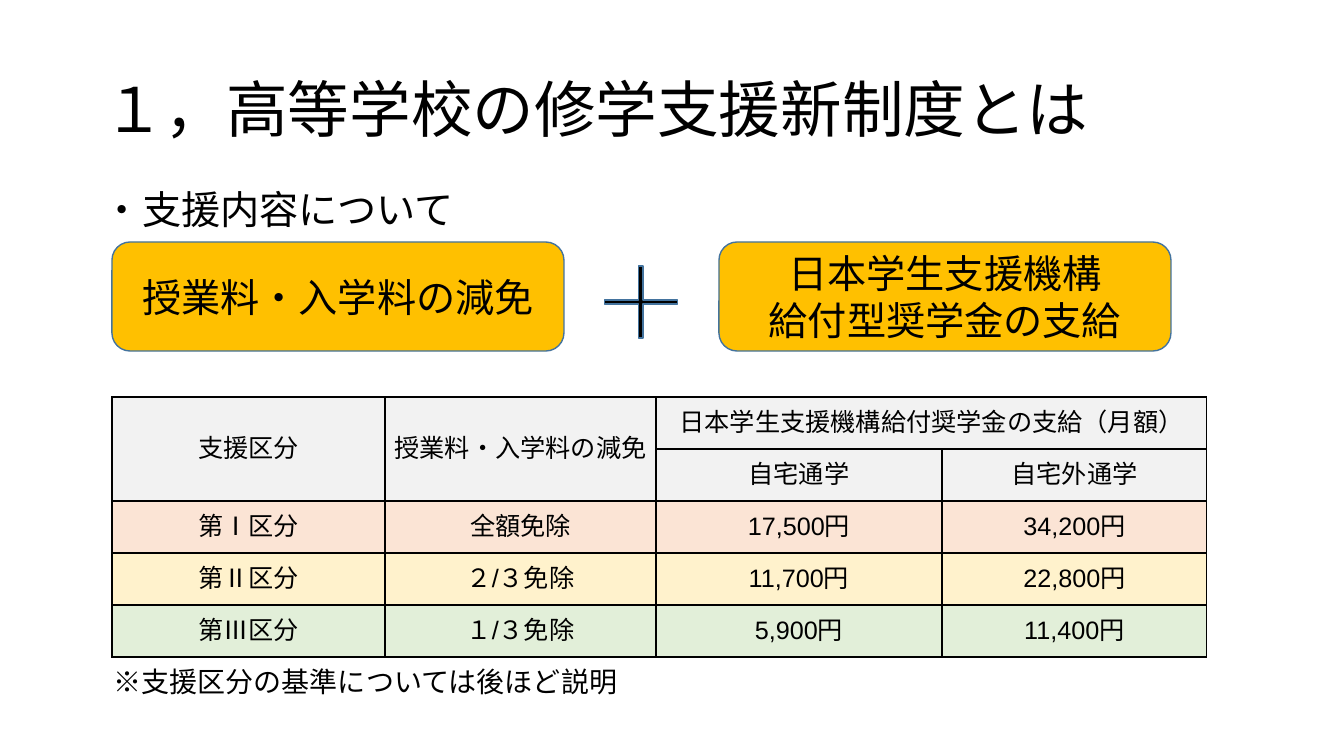
from lxml import etree
from pptx import Presentation
from pptx import util as u
from pptx.dml.color import RGBColor
from pptx.enum import shapes, text
from pptx.oxml.ns import qn

EMU_PER_PX = 914400 / 100.8
GOTHIC, ARIAL = "Noto Sans CJK JP", "Arial"
BLACK, AMBER, OUTLINE, HEADER = "000000", "FFC000", "43739E", "F2F2F2"
CENTER, MIDDLE = text.PP_ALIGN.CENTER, text.MSO_ANCHOR.MIDDLE

COLUMN_WIDTHS = [273, 271, 286, 265]
ROW_HEIGHT = 52
ROWS = [
    (HEADER, ["支援区分", "授業料・入学料の減免", "日本学生支援機構給付奨学金の支給（月額）", ""]),
    (HEADER, ["", "", "自宅通学", "自宅外通学"]),
    ("FBE4D5", ["第Ⅰ区分", "全額免除", "17,500円", "34,200円"]),
    ("FFF2CC", ["第Ⅱ区分", "２/３免除", "11,700円", "22,800円"]),
    ("E2EFD9", ["第Ⅲ区分", "１/３免除", "5,900円", "11,400円"]),
]
MERGES = [((0, 0), (1, 0)), ((0, 1), (1, 1)), ((0, 2), (0, 3))]


def px(length):
    return u.Emu(round(length * EMU_PER_PX))


def color(value):
    return RGBColor.from_string(value)


def write(frame, lines, size, font=GOTHIC, align=None, line_spacing=None):
    """Fill a text frame with one paragraph per line."""
    for index, line in enumerate(lines):
        para = frame.paragraphs[0] if index == 0 else frame.add_paragraph()
        para.alignment = align
        para.line_spacing = line_spacing
        span = para.add_run()
        span.text = line
        span.font.size = u.Pt(size)
        span.font.color.rgb = color(BLACK)
        span.font.name = font
        etree.SubElement(span.font._element, qn("a:ea"), typeface=font)


def add_title(page, line, *area):
    title = page.shapes.title
    title.left, title.top, title.width, title.height = map(px, area)
    title.text_frame.vertical_anchor = MIDDLE
    write(title.text_frame, [line], 44, align=text.PP_ALIGN.LEFT, line_spacing=0.9)


def add_text(page, line, size, *area, wrap=True, **style):
    box = page.shapes.add_textbox(*map(px, area))
    box.text_frame.word_wrap = wrap
    write(box.text_frame, [line], size, **style)


def add_figure(page, kind, fill, *area):
    figure = page.shapes.add_shape(kind, *map(px, area))
    figure.shadow.inherit = False
    figure.fill.solid()
    figure.fill.fore_color.rgb = color(fill)
    figure.line.color.rgb = color(OUTLINE)
    figure.line.width = u.Pt(1)
    return figure


def add_support_box(page, lines, left):
    box = add_figure(page, shapes.MSO_SHAPE.ROUNDED_RECTANGLE, AMBER, left, 242, 452, 109)
    box.text_frame.vertical_anchor = MIDDLE
    write(box.text_frame, lines, 28, align=CENTER)


def set_borders(cell):
    properties = cell._tc.get_or_add_tcPr()
    for position, side in enumerate(("lnL", "lnR", "lnT", "lnB")):
        line = etree.Element(qn("a:" + side), w=str(u.Pt(1)))
        fill = etree.SubElement(line, qn("a:solidFill"))
        etree.SubElement(fill, qn("a:srgbClr"), val=BLACK)
        properties.insert(position, line)


def add_support_table(page, left, top):
    area = left, top, sum(COLUMN_WIDTHS), ROW_HEIGHT * len(ROWS)
    table = page.shapes.add_table(len(ROWS), len(COLUMN_WIDTHS), *map(px, area)).table
    for column, width in zip(table.columns, COLUMN_WIDTHS):
        column.width = px(width)
    for row, (fill, labels) in zip(table.rows, ROWS):
        row.height = px(ROW_HEIGHT)
        for cell, label in zip(row.cells, labels):
            cell.fill.solid()
            cell.fill.fore_color.rgb = color(fill)
            cell.vertical_anchor = MIDDLE
            cell.margin_left = cell.margin_right = px(7)
            cell.margin_top = cell.margin_bottom = 0
            set_borders(cell)
            if label:
                write(cell.text_frame, [label], 18, ARIAL, CENTER)
    for first, last in MERGES:
        table.cell(*first).merge(table.cell(*last))


def main():
    deck = Presentation()
    deck.slide_width, deck.slide_height = px(1344), px(756)
    page = deck.slides.add_slide(deck.slide_layouts[5])

    # Headings
    add_title(page, "１，高等学校の修学支援新制度とは", 93, 40, 1159, 146)
    add_text(page, "・支援内容について", 28, 93, 186, 1159, 495, line_spacing=0.9)

    # The two kinds of support, joined by a plus sign
    add_support_box(page, ["授業料・入学料の減免"], 112)
    add_support_box(page, ["日本学生支援機構", "給付型奨学金の支給"], 719)
    plus = add_figure(page, shapes.MSO_SHAPE.MATH_PLUS, BLACK, 591, 253, 100, 98)
    plus.adjustments[0] = 0.044

    # Amounts by support category
    add_support_table(page, 112, 397)
    add_text(page, "※支援区分の基準については後ほど説明", 20, 101, 660, 529, 44,
             wrap=False, align=CENTER)

    deck.save("out.pptx")


if __name__ == "__main__":
    main()
